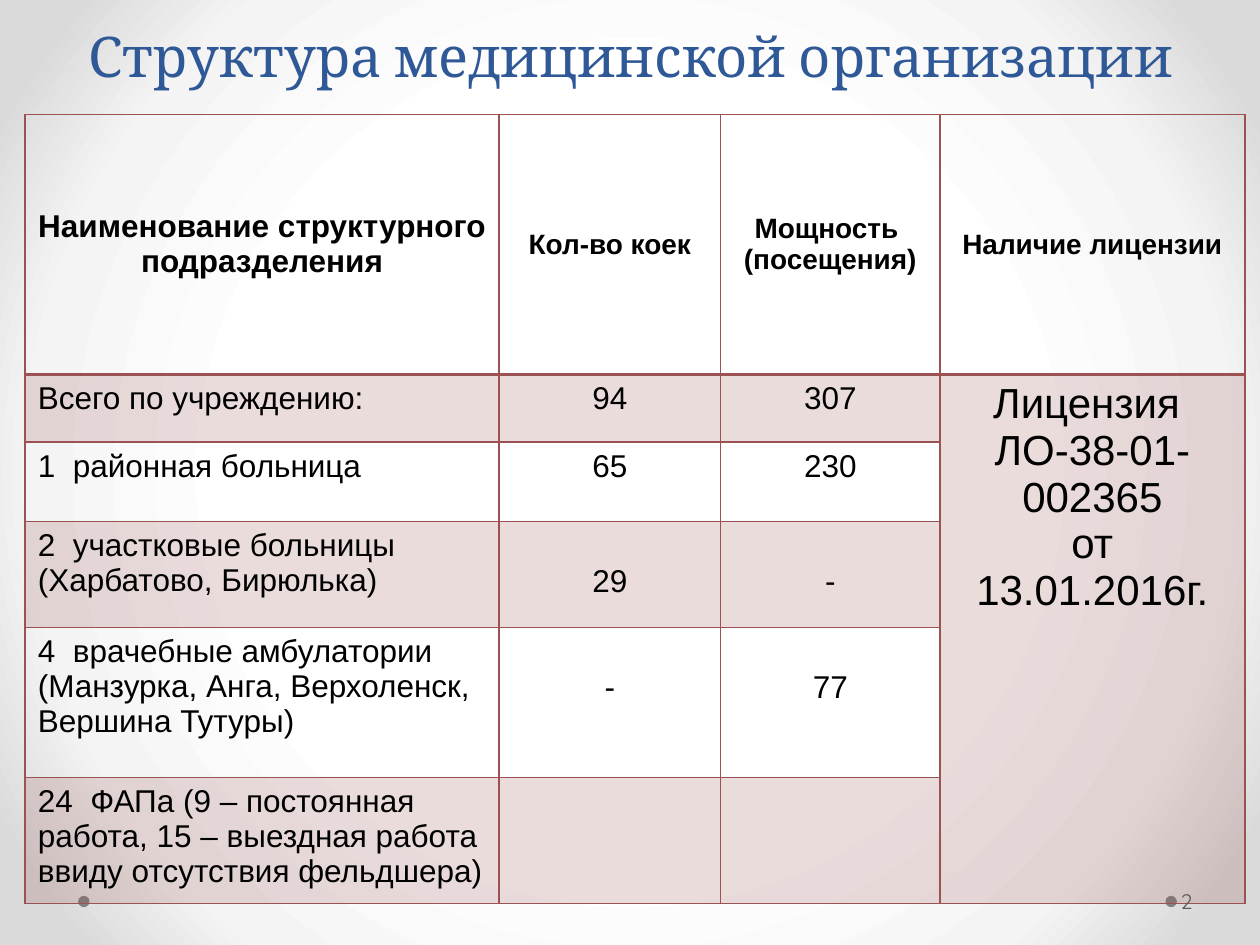
import pptx
import pptx.dml.color
import pptx.enum.shapes
import pptx.enum.text
import pptx.oxml
import pptx.oxml.ns
import pptx.util

WIDTH, HEIGHT = 10, 7.5
ACCENT = "9C5252"
NAMESPACE = pptx.oxml.ns.nsdecls("a", "p")
ALIGN = pptx.enum.text.PP_ALIGN
ANCHOR = pptx.enum.text.MSO_ANCHOR
COLUMNS = [3.76, 1.76, 1.74, 2.42]
ROWS = [2.06, 0.54, 0.63, 0.84, 1.19, 0.94]
LINE_DROP = 0.34
HEADERS = [
    ("Наименование структурного подразделения", 18),
    ("Кол-во коек", 16),
    ("Мощность  (посещения)", 16),
    ("Наличие лицензии", 16),
]
UNITS = [
    ("Всего по учреждению:", "94", "307", 0.05),
    ("1  районная больница", "65", "230", 0.05),
    ("2  участковые больницы (Харбатово, Бирюлька)", "29", "-", LINE_DROP),
    ("4  врачебные амбулатории (Манзурка, Анга, Верхоленск, Вершина Тутуры)",
     "-", "77", LINE_DROP),
    ("24  ФАПа (9 – постоянная работа, 15 – выездная работа ввиду отсутствия фельдшера)",
     "", "", 0.05),
]
LICENCE = "Лицензия \nЛО-38-01-002365\nот 13.01.2016г."


def inches(*values):
    """Convert plain numbers to slide lengths."""
    return [pptx.util.Inches(value) for value in values]


def colour(value):
    """Turn a hex string into a colour."""
    return pptx.dml.color.RGBColor.from_string(value)


def write(frame, text, size=18, font="Arial", ink="000000", bold=False,
          align=ALIGN.LEFT, spacing=None):
    """Write each line of the text as one formatted paragraph."""
    for index, line in enumerate(text.split("\n")):
        para = frame.add_paragraph() if index else frame.paragraphs[0]
        para.alignment = align
        if spacing:
            para.line_spacing = pptx.util.Pt(spacing)
        span = para.add_run()
        span.text = line
        span.font.size = pptx.util.Pt(size)
        span.font.name = font
        span.font.bold = bold
        span.font.color.rgb = colour(ink)


def add_background(page):
    """Fill the page with a radial gradient from white to grey."""
    stops = "".join(
        f'<a:gs pos="{share * 1000}"><a:srgbClr val="{ink}"/></a:gs>'
        for share, ink in [(50, "FFFFFF"), (76, "F4F4F4"), (92, "DADADA")])
    page._element.cSld.insert(0, pptx.oxml.parse_xml(
        f'<p:bg {NAMESPACE}><p:bgPr><a:gradFill rotWithShape="1"><a:gsLst>{stops}</a:gsLst>'
        '<a:path path="circle"><a:fillToRect l="50000" t="50000" r="50000" b="50000"/></a:path>'
        '</a:gradFill><a:effectLst/></p:bgPr></p:bg>'))


def add_dot(page, left):
    """Draw a small grey footer dot."""
    dot = page.shapes.add_shape(
        pptx.enum.shapes.MSO_SHAPE.OVAL, *inches(left, 7.11, 0.09, 0.09))
    dot.shadow.inherit = False
    dot.fill.solid()
    dot.fill.fore_color.rgb = colour("808080")
    dot.line.fill.background()


def add_label(page, place, text, anchor, **style):
    """Add a wrapped text box."""
    frame = page.shapes.add_textbox(*inches(*place)).text_frame
    frame.word_wrap = True
    frame.vertical_anchor = anchor
    write(frame, text, **style)
    return frame


def style_cell(cell, row):
    """Give a cell its borders and its banded, translucent fill."""
    properties = cell._tc.get_or_add_tcPr()
    for side in "LRTB":
        heavy = (row == 0 and side == "B") or (row == 1 and side == "T")
        width = pptx.util.Pt(2 if heavy else 1)
        properties.append(pptx.oxml.parse_xml(
            f'<a:ln{side} {NAMESPACE} w="{width}"><a:solidFill>'
            f'<a:srgbClr val="{ACCENT}"/></a:solidFill></a:ln{side}>'))
    if row % 2:
        cell.fill.solid()
        cell.fill.fore_color.rgb = colour(ACCENT)
        tint = properties.find(pptx.oxml.ns.qn("a:solidFill"))[0]
        tint.append(pptx.oxml.parse_xml(f'<a:alpha {NAMESPACE} val="20000"/>'))
    else:
        cell.fill.background()


def add_units_table(page):
    """Build the table of units with a licence cell spanning the body."""
    table = page.shapes.add_table(
        len(ROWS), len(COLUMNS), *inches(0.2, 0.91, sum(COLUMNS), sum(ROWS))).table
    table.first_row = table.horz_banding = False
    for column, width in zip(table.columns, inches(*COLUMNS)):
        column.width = width
    for index, height in enumerate(inches(*ROWS)):
        table.rows[index].height = height
        for cell in table.rows[index].cells:
            style_cell(cell, 1 if index and cell is None else index)
    for column, (text, size) in enumerate(HEADERS):
        cell = table.cell(0, column)
        cell.vertical_anchor = ANCHOR.MIDDLE
        write(cell.text_frame, text, size=size, bold=True, align=ALIGN.CENTER)
    for row, (name, beds, visits, drop) in enumerate(UNITS, start=1):
        write(table.cell(row, 0).text_frame, name)
        for column, value in enumerate((beds, visits), start=1):
            cell = table.cell(row, column)
            cell.margin_top = pptx.util.Inches(drop)
            if value:
                write(cell.text_frame, value, align=ALIGN.CENTER)
    licence = table.cell(1, 3)
    licence.merge(table.cell(len(UNITS), 3))
    write(licence.text_frame, LICENCE, size=24, align=ALIGN.CENTER)


def main():
    """Build and save the slide."""
    deck = pptx.Presentation()
    deck.slide_width, deck.slide_height = inches(WIDTH, HEIGHT)
    page = deck.slides.add_slide(deck.slide_layouts[6])
    add_background(page)
    for left in (9.25, 0.62):
        add_dot(page, left)
    add_label(page, (0.51, 0.44, 9, 0.31), "Структура медицинской организации",
              ANCHOR.BOTTOM, size=32, font="Cambria", ink="2F5897",
              align=ALIGN.CENTER, spacing=58)
    add_units_table(page)
    number = add_label(page, (9.34, 6.95, 0.61, 0.4), "2", ANCHOR.MIDDLE,
                       size=12, font="Quicksand", ink="595959")
    number.margin_left, number.margin_right = inches(0.03, 0.05)
    deck.save("out.pptx")


if __name__ == "__main__":
    main()
